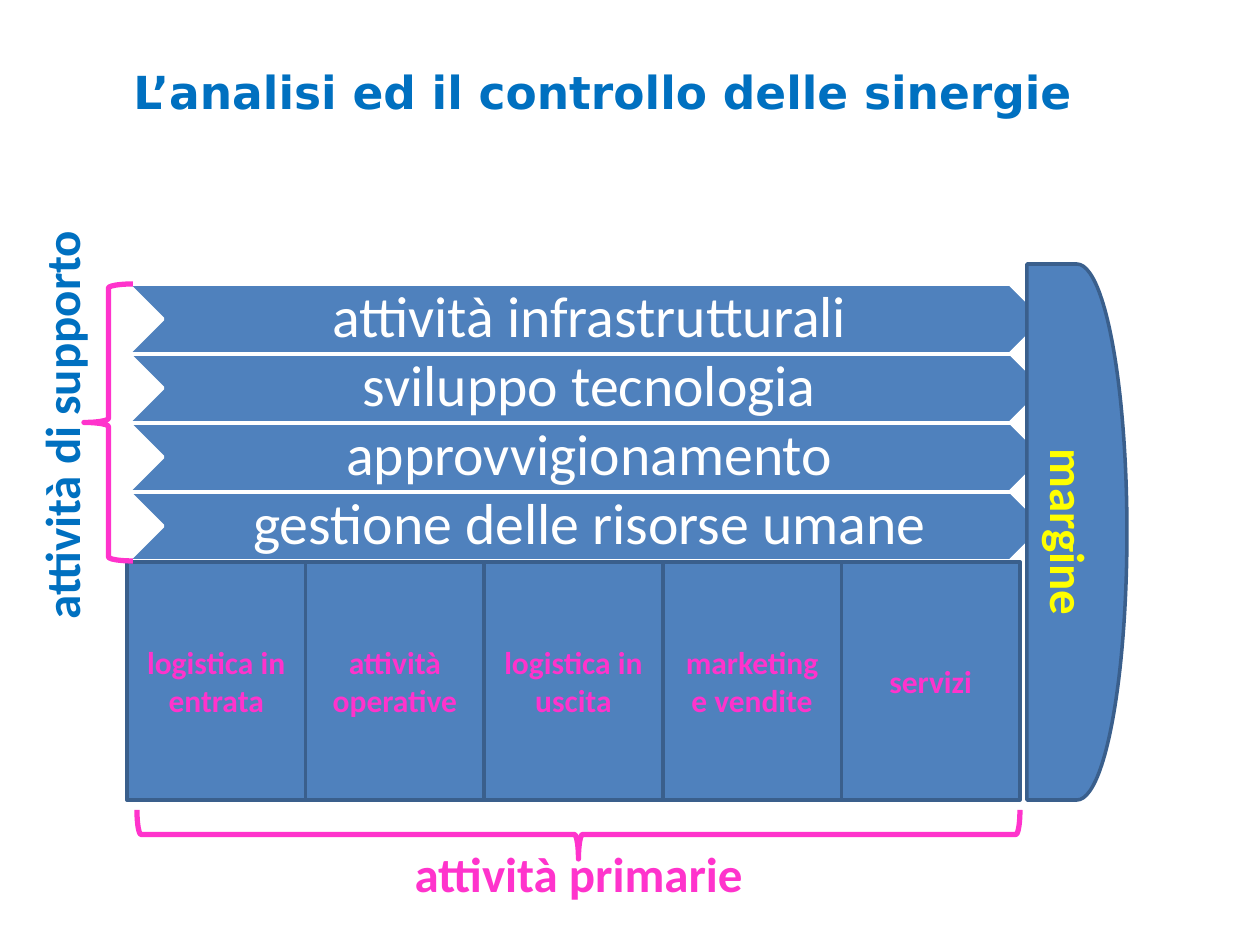
from pptx import Presentation
from pptx.dml.color import RGBColor
from pptx.enum.shapes import MSO_SHAPE as Kind
from pptx.enum.text import MSO_ANCHOR as Anchor, MSO_AUTO_SIZE as Auto, PP_ALIGN as Align
from pptx.util import Pt

PX = 914400 / 126
BLUE, EDGE, PINK, SKY = "4F81BD", "3A5F8C", "FF33CC", "0070C0"


def emu(box):
    return [round(v * PX) for v in box]


def color(code):
    return RGBColor.from_string(code)


def turn(box):
    """Box to give a shape so that it fills this box after a quarter turn."""
    x, y, w, h = box
    return x + (w - h) / 2, y + (h - w) / 2, h, w


def write(shape, text, size=28, ink=PINK, bold=True, font="Calibri",
          align=Align.CENTER, anchor=Anchor.MIDDLE, wrap=True, pads=None, lead=None):
    frame = shape.text_frame
    frame.word_wrap = wrap
    frame.vertical_anchor = anchor
    if pads:
        (frame.margin_left, frame.margin_top,
         frame.margin_right, frame.margin_bottom) = emu(pads)
    para = frame.paragraphs[0]
    para.alignment = align
    if lead:
        para.line_spacing = lead
    run = para.add_run()
    run.text = text
    face = run.font
    face.name, face.size, face.bold = font, Pt(size), bold
    face.color.rgb = color(ink)


def draw(slide, kind, box, fill=None, line=EDGE, width=2):
    shape = slide.shapes.add_shape(kind, *emu(box))
    shape.shadow.inherit = False
    if fill:
        shape.fill.solid()
        shape.fill.fore_color.rgb = color(fill)
    else:
        shape.fill.background()
    shape.line.color.rgb = color(line)
    shape.line.width = Pt(width)
    return shape


def label(slide, box, text, up=False, **style):
    area = slide.shapes.add_textbox(*emu(turn(box) if up else box))
    write(area, text, anchor=Anchor.TOP, wrap=False, **style)
    area.text_frame.auto_size = Auto.SHAPE_TO_FIT_TEXT
    if up:
        area.rotation = 270


def brace(slide, box, down=False):
    shape = draw(slide, Kind.LEFT_BRACE, turn(box) if down else box, line=PINK, width=3)
    if down:
        shape.rotation = 270


def support(slide, box, names):
    """Stacked chevrons, the upper ones in front."""
    x, y, w, h = box
    step = h / len(names)
    tall = step + 1
    for i, name in reversed(list(enumerate(names))):
        top = y + i * step
        draw(slide, Kind.CHEVRON, (x, top, w, tall), BLUE, "FFFFFF")
        area = slide.shapes.add_textbox(*emu((x + tall / 2, top, w - tall, tall)))
        write(area, name, size=33, ink="FFFFFF", bold=False, pads=(6, 3, 0, 3), lead=0.9)


def primary(slide, box, names):
    """Row of equal cells."""
    x, y, w, h = box
    step = w / len(names)
    for i, name in enumerate(names):
        cell = draw(slide, Kind.RECTANGLE, (x + i * step, y, step, h), BLUE)
        write(cell, name, size=18)


def margin(slide, box):
    """Rounded end piece with text running down."""
    shape = draw(slide, Kind.FLOWCHART_DELAY, box, BLUE)
    write(shape, "margine", ink="FFFF00")
    shape.text_frame._txBody.bodyPr.set("vert", "vert")


def main():
    deck = Presentation()
    deck.slide_width, deck.slide_height = emu((1260, 945))
    slide = deck.slides.add_slide(deck.slide_layouts[6])

    # Title
    label(slide, (115, 58, 971, 68), "L’analisi ed il controllo delle sinergie",
          size=26, ink=SKY, font="DejaVu Sans", align=Align.RIGHT)

    # Value chain
    support(slide, (128, 284, 917, 276),
            ["attività infrastrutturali", "sviluppo tecnologia",
             "approvvigionamento", "gestione delle risorse umane"])
    primary(slide, (127, 562, 893, 238),
            ["logistica in entrata", "attività operative", "logistica in uscita",
             "marketing e vendite", "servizi"])
    margin(slide, (1027, 264, 100, 536))

    # Braces and their labels
    brace(slide, (84, 284, 49, 277))
    brace(slide, (137, 810, 883, 49), down=True)
    label(slide, (25, 209, 72, 432), "attività di supporto", up=True, ink=SKY)
    label(slide, (394, 837, 369, 72), "attività primarie")

    deck.save("out.pptx")


if __name__ == "__main__":
    main()
